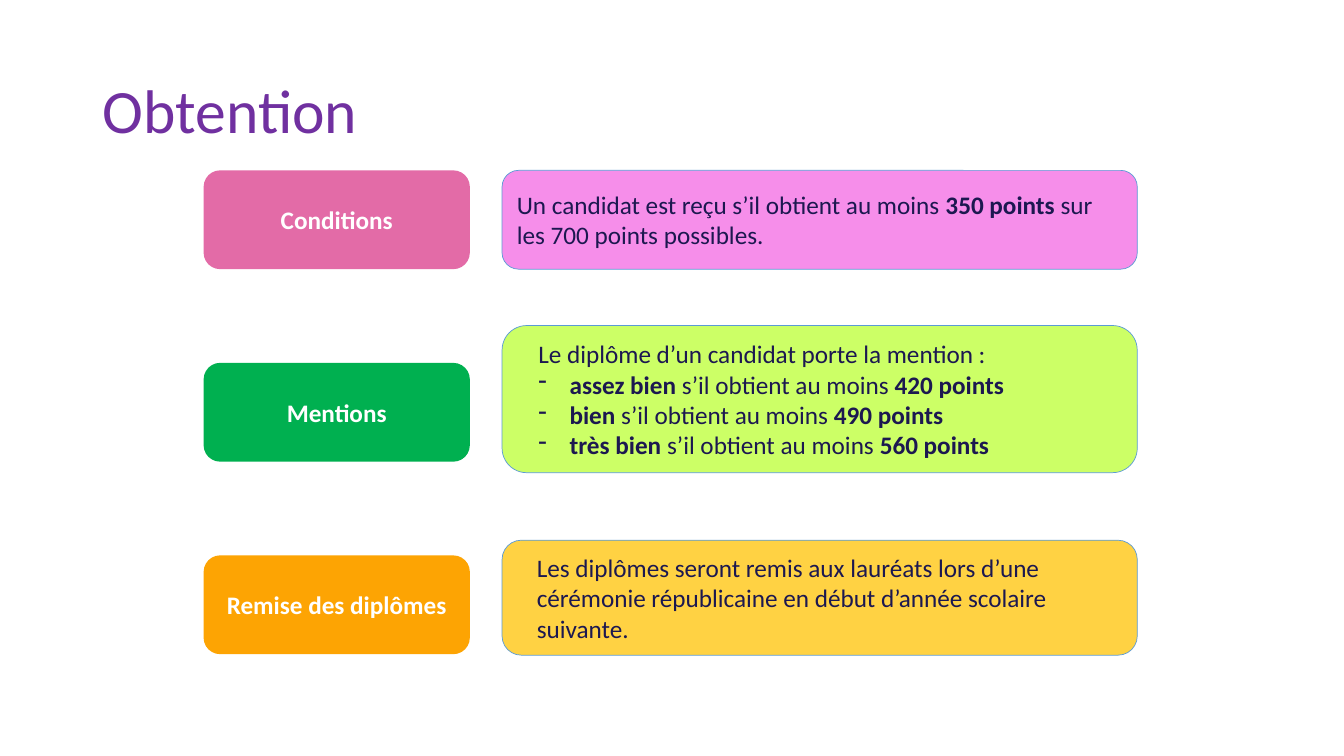
"""Build the slide on how the diploma is obtained."""
import dataclasses

import lxml.etree
import pptx
import pptx.dml.color
import pptx.enum.shapes
import pptx.enum.text
import pptx.oxml.ns
import pptx.shapes.autoshape
import pptx.slide
import pptx.text.text
import pptx.util

Inches = pptx.util.Inches

COLORS = {
    "title": "7030A0", "white": "FFFFFF", "ink": "1C1850", "edge": "5B9BD5",
    "rose": "E36BA7", "pink": "F68EEA", "green": "00B050", "lime": "CCFF66",
    "orange": "FDA403", "gold": "FFD243",
}
FONT = "Calibri"
LABEL_LEFT, LABEL_WIDTH, LABEL_HEIGHT = 2.02, 2.64, 0.98
LABEL_TOP, LABEL_STEP = 1.69, 1.91
PANEL_LEFT, PANEL_WIDTH = 4.98, 6.3


@dataclasses.dataclass
class Line:
    text: str
    margin: float = 0
    indent: float = 0
    bullet: str = ""


@dataclasses.dataclass
class Row:
    label: str
    dark: str
    light: str
    top: float
    height: float
    lines: list[Line]


def mention(grade: str, points: int) -> Line:
    return Line(f"*{grade}* s’il obtient au moins *{points} points*", 0.5, -0.31, "-")


ROWS = [
    Row("Conditions", "rose", "pink", 1.69, 0.98, [
        Line("Un candidat est reçu s’il obtient au moins *350 points* sur les 700 points possibles."),
    ]),
    Row("Mentions", "green", "lime", 3.23, 1.46, [
        Line("Le diplôme d’un candidat porte la mention :", 0.19),
        mention("assez bien", 420),
        mention("bien", 490),
        mention("très bien", 560),
    ]),
    Row("Remise des diplômes", "orange", "gold", 5.36, 1.14, [
        Line("Les diplômes seront remis aux lauréats lors d’une cérémonie républicaine "
             "en début d’année scolaire suivante.", 0.19),
    ]),
]


def color(name: str) -> pptx.dml.color.RGBColor:
    return pptx.dml.color.RGBColor.from_string(COLORS[name])


def style(para: pptx.text.text._Paragraph, size: float, ink: str) -> None:
    para.font.name = FONT
    para.font.size = pptx.util.Pt(size)
    para.font.color.rgb = color(ink)


def add_box(slide: pptx.slide.Slide, left: float, top: float, width: float,
            height: float, fill: str) -> pptx.shapes.autoshape.Shape:
    box = slide.shapes.add_shape(
        pptx.enum.shapes.MSO_SHAPE.ROUNDED_RECTANGLE,
        Inches(left), Inches(top), Inches(width), Inches(height))
    box.shadow.inherit = False
    box.fill.solid()
    box.fill.fore_color.rgb = color(fill)
    box.text_frame.word_wrap = True
    box.text_frame.vertical_anchor = pptx.enum.text.MSO_ANCHOR.MIDDLE
    return box


def add_label(slide: pptx.slide.Slide, row: Row, top: float) -> None:
    box = add_box(slide, LABEL_LEFT, top, LABEL_WIDTH, LABEL_HEIGHT, row.dark)
    box.line.fill.background()
    para = box.text_frame.paragraphs[0]
    para.text = row.label
    para.alignment = pptx.enum.text.PP_ALIGN.CENTER
    style(para, 18, "white")
    para.font.bold = True


def write_line(para: pptx.text.text._Paragraph, line: Line) -> None:
    para.alignment = pptx.enum.text.PP_ALIGN.LEFT
    style(para, 18, "ink")
    for place, part in enumerate(line.text.split("*")):
        if part:
            run = para.add_run()
            run.text = part
            run.font.bold = place % 2 == 1
    props = para._p.get_or_add_pPr()
    props.set("marL", str(Inches(line.margin)))
    props.set("indent", str(Inches(line.indent)))
    if line.bullet:
        mark = lxml.etree.Element(pptx.oxml.ns.qn("a:buChar"), char=line.bullet)
        props.insert(0, mark)


def add_panel(slide: pptx.slide.Slide, row: Row) -> None:
    box = add_box(slide, PANEL_LEFT, row.top, PANEL_WIDTH, row.height, row.light)
    box.line.color.rgb = color("edge")
    box.line.width = pptx.util.Pt(0.5)
    frame = box.text_frame
    for place, line in enumerate(row.lines):
        write_line(frame.add_paragraph() if place else frame.paragraphs[0], line)


def add_title(slide: pptx.slide.Slide, text: str) -> None:
    box = slide.shapes.add_textbox(Inches(0.92), Inches(0.4), Inches(11.5), Inches(1.45))
    box.text_frame.word_wrap = True
    box.text_frame.vertical_anchor = pptx.enum.text.MSO_ANCHOR.MIDDLE
    para = box.text_frame.paragraphs[0]
    para.text = text
    para.line_spacing = 0.9
    style(para, 44, "title")


def main() -> None:
    deck = pptx.Presentation()
    deck.slide_width, deck.slide_height = Inches(13.33), Inches(7.5)
    slide = deck.slides.add_slide(deck.slide_layouts[6])
    add_title(slide, "Obtention")
    for place, row in enumerate(ROWS):
        add_label(slide, row, LABEL_TOP + place * LABEL_STEP)
        add_panel(slide, row)
    deck.save("out.pptx")


if __name__ == "__main__":
    main()
